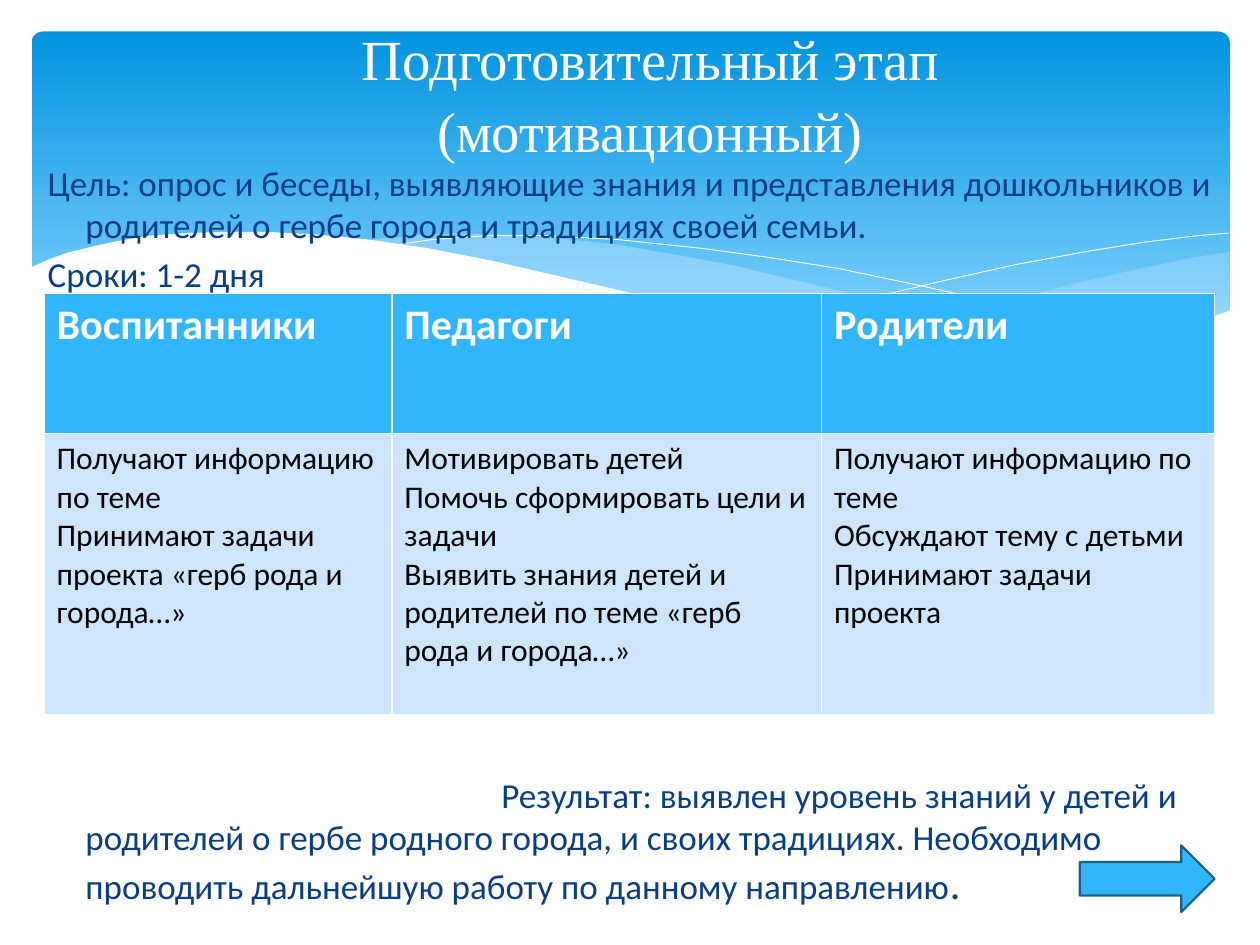
from lxml import etree
from pptx import Presentation
from pptx.dml.color import RGBColor
from pptx.enum.shapes import MSO_SHAPE
from pptx.enum.text import MSO_ANCHOR, PP_ALIGN
from pptx.oxml.ns import qn
from pptx.util import Inches, Pt

ROUNDED, ARROW = MSO_SHAPE.ROUNDED_RECTANGLE, MSO_SHAPE.RIGHT_ARROW
MIDDLE, CENTER = MSO_ANCHOR.MIDDLE, PP_ALIGN.CENTER
COLORS = {name: RGBColor.from_string(value) for name, value in {
    "white": "FFFFFF", "black": "000000", "navy": "073E87",
    "sky top": "0293E0", "sky bottom": "83D3FE", "wave": "C6E7FC",
    "accent": "31B6FD", "accent edge": "195F84", "pale": "CEE5FE",
}.items()}

prs = Presentation()
prs.slide_width, prs.slide_height = Inches(10), Inches(7.5)
slide = prs.slides.add_slide(prs.slide_layouts[5])
shapes = slide.shapes
UNIT = prs.slide_width // 1000  # grid of 1000 columns by 750 rows


def grid(*cells):
    return [cell * UNIT for cell in cells]


def style(paragraph, size, color, font="Calibri", bold=False):
    paragraph.font.size, paragraph.font.name = Pt(size), font
    paragraph.font.bold, paragraph.font.color.rgb = bold, COLORS[color]


# Blue banner
banner = shapes.add_shape(ROUNDED, *grid(25, 25, 951, 270))
banner.shadow.inherit = False
banner.adjustments[0] = 0.034
banner.line.fill.background()
banner.fill.gradient()
banner.fill.gradient_angle = 270
for stop, position, color in zip(banner.fill.gradient_stops, (0, 0.9),
                                 ("sky top", "sky bottom")):
    stop.position, stop.color.rgb = position, COLORS[color]

# Waves: points in grid cells, fill colour (None for a thin line), opacity in %
WAVES = [
    ([(976, 200), (948, 204), (906, 213), (861, 223), (805, 237), (753, 248),
      (706, 257), (661, 265), (705, 271), (757, 275), (803, 278), (854, 276),
      (897, 270), (935, 262), (976, 247)], "wave", 29),
    ([(893, 273), (837, 265), (775, 254), (706, 240), (629, 222), (584, 211),
      (541, 203), (489, 194), (442, 189), (399, 186), (361, 185), (328, 187),
      (286, 191), (342, 199), (404, 211), (449, 222), (530, 240), (601, 255),
      (665, 266), (722, 274), (773, 277), (828, 278), (876, 275)], "wave", 40),
    ([(309, 195), (344, 190), (387, 187), (433, 187), (489, 190), (556, 197),
      (608, 204), (665, 213), (727, 226), (795, 241), (869, 261), (907, 272)],
     None, 100),
    ([(613, 257), (672, 241), (748, 223), (806, 210), (866, 199), (910, 192),
      (951, 187), (975, 185)], None, 100),
    ([(977, 246), (950, 256), (920, 265), (887, 271), (850, 275), (809, 277),
      (761, 275), (708, 270), (648, 262), (579, 250), (503, 233), (447, 220),
      (391, 207), (340, 197), (292, 190), (250, 186), (211, 184), (177, 184),
      (146, 185), (119, 187), (95, 191), (76, 195), (52, 201), (36, 207),
      (23, 213), (23, 329), (977, 329)], "white", 100),
]
for points, color, opacity in WAVES:
    outline = shapes.build_freeform(*points[0], scale=UNIT)
    outline.add_line_segments(points[1:], close=color is not None)
    wave = outline.convert_to_shape()
    wave.shadow.inherit = False
    if color is None:
        wave.fill.background()
        wave.line.color.rgb, wave.line.width = COLORS["white"], Pt(0.5)
        continue
    wave.line.fill.background()
    wave.fill.solid()
    wave.fill.fore_color.rgb = COLORS[color]
    if opacity < 100:
        solid = wave.fill._xPr.find(qn("a:solidFill"))
        etree.SubElement(solid[0], qn("a:alpha"), val=str(opacity * 1000))

# Title, brought in front of the banner
title = shapes.title
shapes._spTree.append(title._element)
title.left, title.top, title.width, title.height = grid(83, 21, 866, 104)
title.text_frame.text = "Подготовительный этап\v(мотивационный)"
title.text_frame.vertical_anchor = MIDDLE
heading = title.text_frame.paragraphs[0]
heading.alignment, heading.line_spacing = CENTER, 1.05
style(heading, 32.4, "white", "Times New Roman")

# Goal and dates above the table, result below: top, height, first indent, texts
RESULT = ("Результат: выявлен уровень знаний у детей и родителей о гербе родного "
          "города, и своих традициях. Необходимо проводить дальнейшую работу "
          "по данному направлению")
NOTES = [
    (123, 110, -30, ["Цель: опрос и беседы, выявляющие знания и представления "
                     "дошкольников и родителей о гербе города и традициях своей "
                     "семьи.", "Сроки: 1-2 дня"]),
    (609, 120, 330, [RESULT]),
]
for top, height, indent, texts in NOTES:
    note = shapes.add_textbox(*grid(28, top, 958, height)).text_frame
    note.word_wrap = True
    note.text = "\n".join(texts)
    for paragraph in note.paragraphs:
        style(paragraph, 20, "navy")
        paragraph.space_before = Pt(4)
        margins = paragraph._p.get_or_add_pPr()
        margins.set("marL", str(30 * UNIT))
        margins.set("indent", str(indent * UNIT))
full_stop = paragraph.add_run()
full_stop.text, full_stop.font.size = ".", Pt(24)

# Tasks by group of participants
TASKS = {
    "Воспитанники": ["Получают информацию по теме",
                     "Принимают задачи проекта «герб рода и города…»"],
    "Педагоги": ["Мотивировать детей", "Помочь сформировать цели и задачи",
                 "Выявить знания детей и родителей по теме «герб рода и города…»"],
    "Родители": ["Получают информацию по теме", "Обсуждают тему с детьми",
                 "Принимают задачи проекта"],
}
table = shapes.add_table(2, len(TASKS), *grid(35, 233, 929, 334)).table
for row, height in zip(table.rows, grid(111, 223)):
    row.height = height
for column, width in zip(table.columns, grid(276, 341, 312)):
    column.width = width
for col, (group, tasks) in enumerate(TASKS.items()):
    for row, (lines, fill, size, color) in enumerate([
            ([group], "accent", 24, "white"), (tasks, "pale", 18, "black")]):
        cell = table.cell(row, col)
        cell.text = "\n".join(lines)
        cell.fill.solid()
        cell.fill.fore_color.rgb = COLORS[fill]
        for paragraph in cell.text_frame.paragraphs:
            style(paragraph, size, color, bold=row == 0)

# Arrow to the next stage
arrow = shapes.add_shape(ARROW, *grid(857, 671, 107, 53))
arrow.shadow.inherit = False
arrow.fill.solid()
arrow.fill.fore_color.rgb = COLORS["accent"]
arrow.line.color.rgb, arrow.line.width = COLORS["accent edge"], Pt(1.25)

prs.save("out.pptx")
